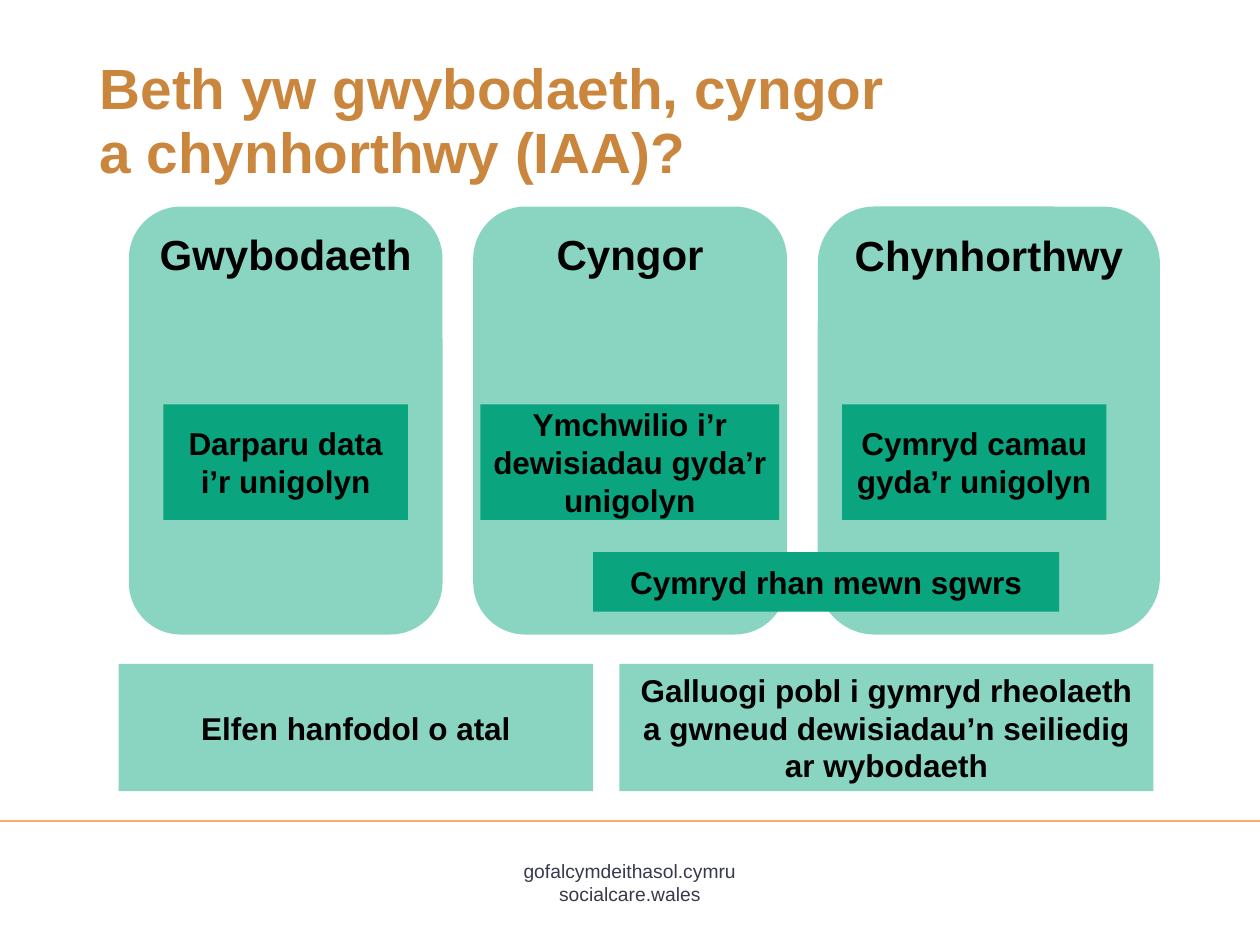
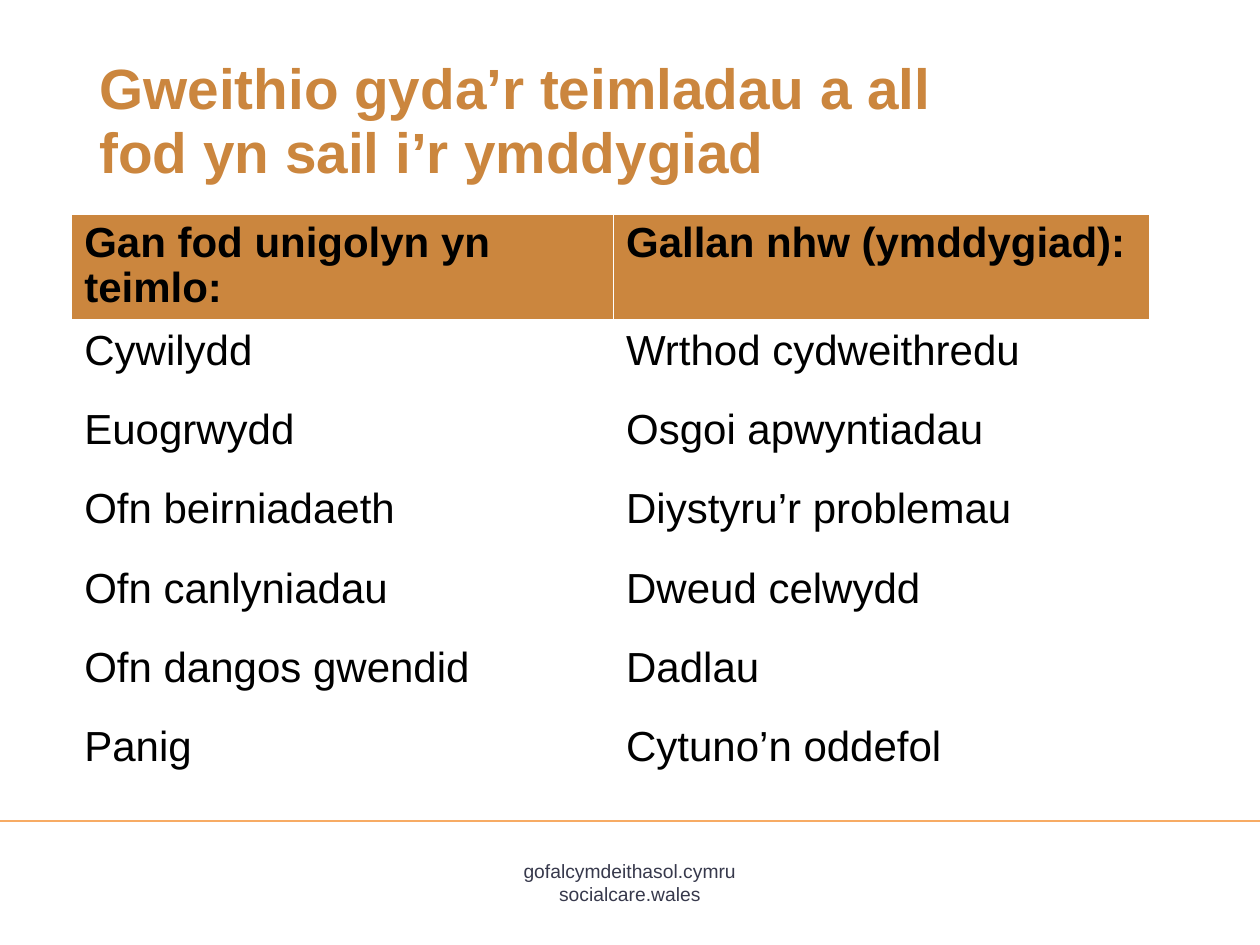
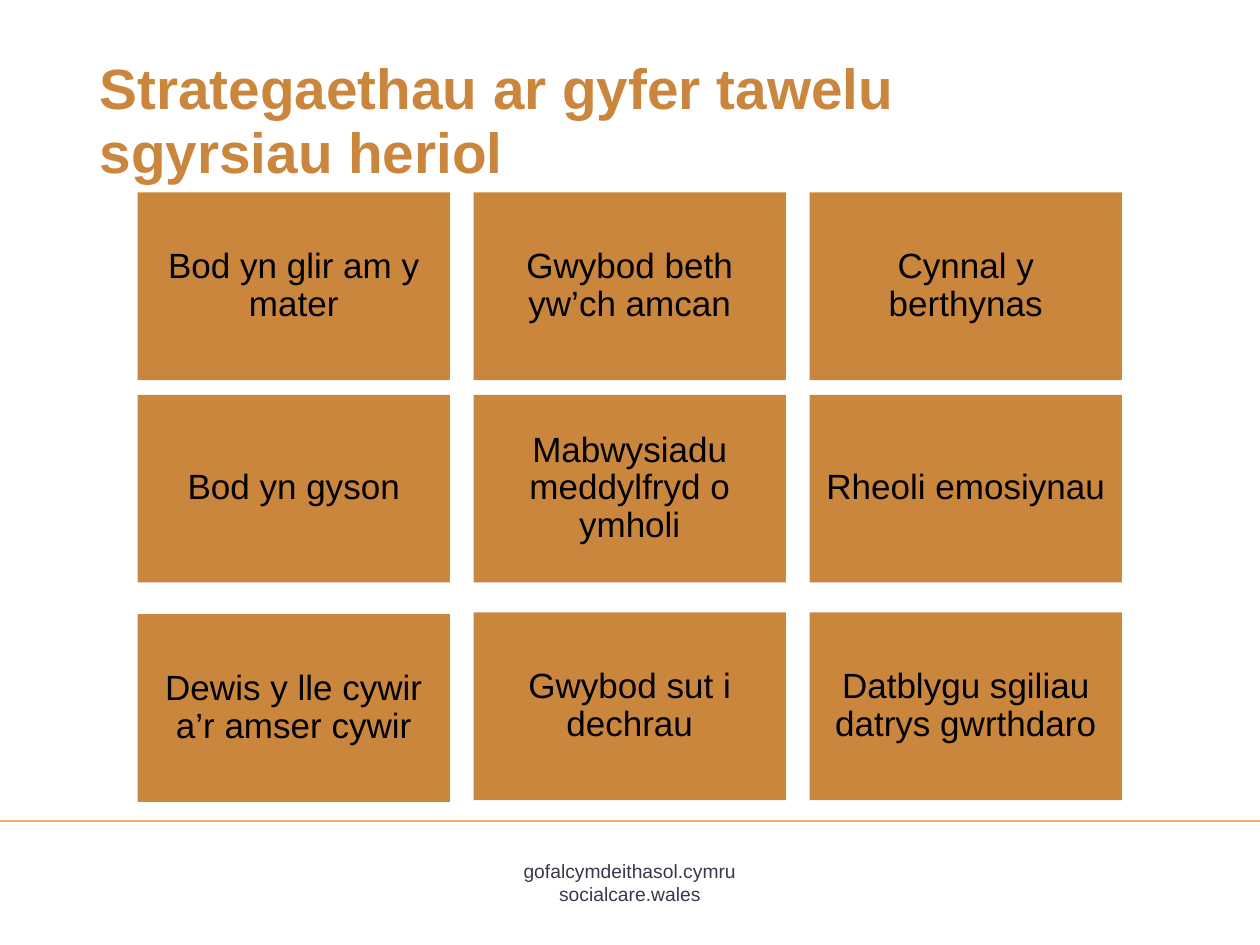
import pptx
import pptx.dml.color
import pptx.enum.shapes
import pptx.enum.text
import pptx.oxml
import pptx.oxml.ns
import pptx.util
from lxml import etree

Pt = pptx.util.Pt
SHAPE = pptx.enum.shapes.MSO_SHAPE
ANCHOR = pptx.enum.text.MSO_ANCHOR
CENTER = pptx.enum.text.PP_ALIGN.CENTER
qn = pptx.oxml.ns.qn

# Shared colours and font
FONT = "Arial"
OCHRE, RULE, SLATE = "CB863E", "F7AB64", "37394C"
MINT, GREEN = "16AD85", "0AA47E"
BLACK, WHITE = "000000", "FFFFFF"


def rgb(value):
    return pptx.dml.color.RGBColor.from_string(value)


def add_box(s, kind, at, fill, text, size, bold=True, alpha=None):
    """Add a filled box with centred text; at is left, top, width, height."""
    sp = s.shapes.add_shape(kind, *[Pt(v) for v in at])
    sp.shadow.inherit = False
    sp.line.fill.background()
    sp.fill.solid()
    sp.fill.fore_color.rgb = rgb(fill)
    if alpha:
        color = sp.element.spPr.find(qn("a:solidFill"))[0]
        etree.SubElement(color, qn("a:alpha"), val=str(alpha * 1000))
    tf = sp.text_frame
    tf.word_wrap = True
    tf.vertical_anchor = ANCHOR.MIDDLE
    tf.margin_left = tf.margin_right = Pt(6)
    p = tf.paragraphs[0]
    p.text = text
    p.alignment = CENTER
    p.font.name, p.font.size, p.font.bold = FONT, Pt(size), bold
    p.font.color.rgb = rgb(BLACK)
    return sp


prs = pptx.Presentation()
prs.slide_width, prs.slide_height = Pt(720), Pt(540)

# Title, rule and footer of every slide
titles = [
    "Beth yw gwybodaeth, cyngor \va chynhorthwy (IAA)?",
    "Gweithio gyda’r teimladau a all fod yn sail i’r ymddygiad",
    "Strategaethau ar gyfer tawelu sgyrsiau heriol",
]
slides = []
for title in titles:
    s = prs.slides.add_slide(prs.slide_layouts[5])
    slides.append(s)

    sp = s.shapes.title
    sp.left, sp.top, sp.width, sp.height = Pt(49.7), Pt(28.8), Pt(538.6), Pt(81.4)
    tf = sp.text_frame
    tf.word_wrap = True
    tf.auto_size = pptx.enum.text.MSO_AUTO_SIZE.NONE
    tf.vertical_anchor = ANCHOR.TOP
    tf.margin_top = Pt(4.8)
    p = tf.paragraphs[0]
    p.text = title
    p.alignment = pptx.enum.text.PP_ALIGN.LEFT
    p.line_spacing = 0.94
    p.font.name, p.font.size, p.font.bold = FONT, Pt(32.4), True
    p.font.color.rgb = rgb(OCHRE)

    rule = s.shapes.add_connector(
        pptx.enum.shapes.MSO_CONNECTOR.STRAIGHT, 0, Pt(469.2), Pt(720), Pt(469.2))
    rule.line.color.rgb = rgb(RULE)
    rule.line.width = Pt(1)
    etree.SubElement(rule.element.spPr, qn("a:effectLst"))

    tf = s.shapes.add_textbox(Pt(278.6), Pt(487.4), Pt(162.7), Pt(33.1)).text_frame
    tf.word_wrap = True
    tf.text = "gofalcymdeithasol.cymru\nsocialcare.wales"
    for p in tf.paragraphs:
        p.alignment = CENTER
        p.font.name, p.font.size = FONT, Pt(11)
        p.font.color.rgb = rgb(SLATE)

# Slide 1: three columns, with what each involves
s = slides[0]
for heading, left, width in [("Gwybodaeth", 73.6, 179.3), ("Cyngor", 270.4, 179.3),
                             ("Chynhorthwy", 467.3, 195.5)]:
    card = add_box(s, SHAPE.ROUNDED_RECTANGLE, (left, 118, width, 244.6),
                   MINT, heading, 24, alpha=50)
    card.text_frame.vertical_anchor = ANCHOR.TOP

for text, left, top, width, height in [
    ("Darparu data i’r unigolyn", 93.4, 231.1, 139.7, 66),
    ("Ymchwilio i’r dewisiadau gyda’r unigolyn", 274.5, 231.1, 170.8, 66),
    ("Cymryd camau gyda’r unigolyn", 481.2, 231.1, 151, 66),
    ("Cymryd rhan mewn sgwrs", 339, 315.5, 266.2, 34),
]:
    add_box(s, SHAPE.RECTANGLE, (left, top, width, height), GREEN, text, 18)

for text, left, width in [
    ("Elfen hanfodol o atal", 67.8, 271.2),
    ("Galluogi pobl i gymryd rheolaeth a gwneud dewisiadau’n seiliedig ar wybodaeth",
     354, 305.1),
]:
    add_box(s, SHAPE.RECTANGLE, (left, 379.4, width, 72.8), MINT, text, 18, alpha=50)

# Slide 2: table of feelings and behaviour
rows = [
    ("Gan fod unigolyn yn teimlo:", "Gallan nhw (ymddygiad):"),
    ("Cywilydd", "Wrthod cydweithredu"),
    ("Euogrwydd", "Osgoi apwyntiadau"),
    ("Ofn beirniadaeth", "Diystyru’r problemau"),
    ("Ofn canlyniadau", "Dweud celwydd"),
    ("Ofn dangos gwendid", "Dadlau"),
    ("Panig", "Cytuno’n oddefol"),
]
header_height, row_height = 59, 45.2
table = slides[1].shapes.add_table(
    len(rows), 2, Pt(41), Pt(122.7), Pt(616.3),
    Pt(header_height + row_height * (len(rows) - 1))).table
table.horz_banding = False
table.columns[0].width, table.columns[1].width = Pt(309.6), Pt(306.7)
for i, row in enumerate(rows):
    header = i == 0
    table.rows[i].height = Pt(header_height if header else row_height)
    for j, text in enumerate(row):
        cell = table.cell(i, j)
        tcPr = cell._tc.get_or_add_tcPr()
        for side in "LRTB":
            width = 3 if header and side == "B" else 1
            ln = etree.SubElement(tcPr, qn("a:ln" + side), w=str(Pt(width)))
            fill = etree.SubElement(ln, qn("a:solidFill"))
            etree.SubElement(fill, qn("a:srgbClr"), val=WHITE)
        cell.fill.solid()
        cell.fill.fore_color.rgb = rgb(OCHRE if header else WHITE)
        p = cell.text_frame.paragraphs[0]
        p.text = text
        p.font.name, p.font.size, p.font.bold = FONT, Pt(24), header
        p.font.color.rgb = rgb(BLACK)
        if header:
            p.line_spacing = 0.97
            cell.margin_bottom = Pt(1.5)

# Slide 3: grid of strategies
strategies = [
    ("Bod yn glir am y mater", "Gwybod beth yw’ch amcan", "Cynnal y berthynas"),
    ("Bod yn gyson", "Mabwysiadu meddylfryd o ymholi", "Rheoli emosiynau"),
    ("Dewis y lle cywir a’r amser cywir", "Gwybod sut i dechrau",
     "Datblygu sgiliau datrys gwrthdaro"),
]
for top, row in zip((110, 225.6, 350), strategies):
    for col, text in enumerate(row):
        sp = add_box(slides[2], SHAPE.RECTANGLE, (78.6 + 192 * col, top, 178.5, 107.2),
                     OCHRE, text, 20, bold=False)
        sp.text_frame.paragraphs[0].line_spacing = 0.9
sp = slides[2].shapes[-3]
sp.top += Pt(1)  # the last row's first box sits slightly lower

prs.save("out.pptx")
